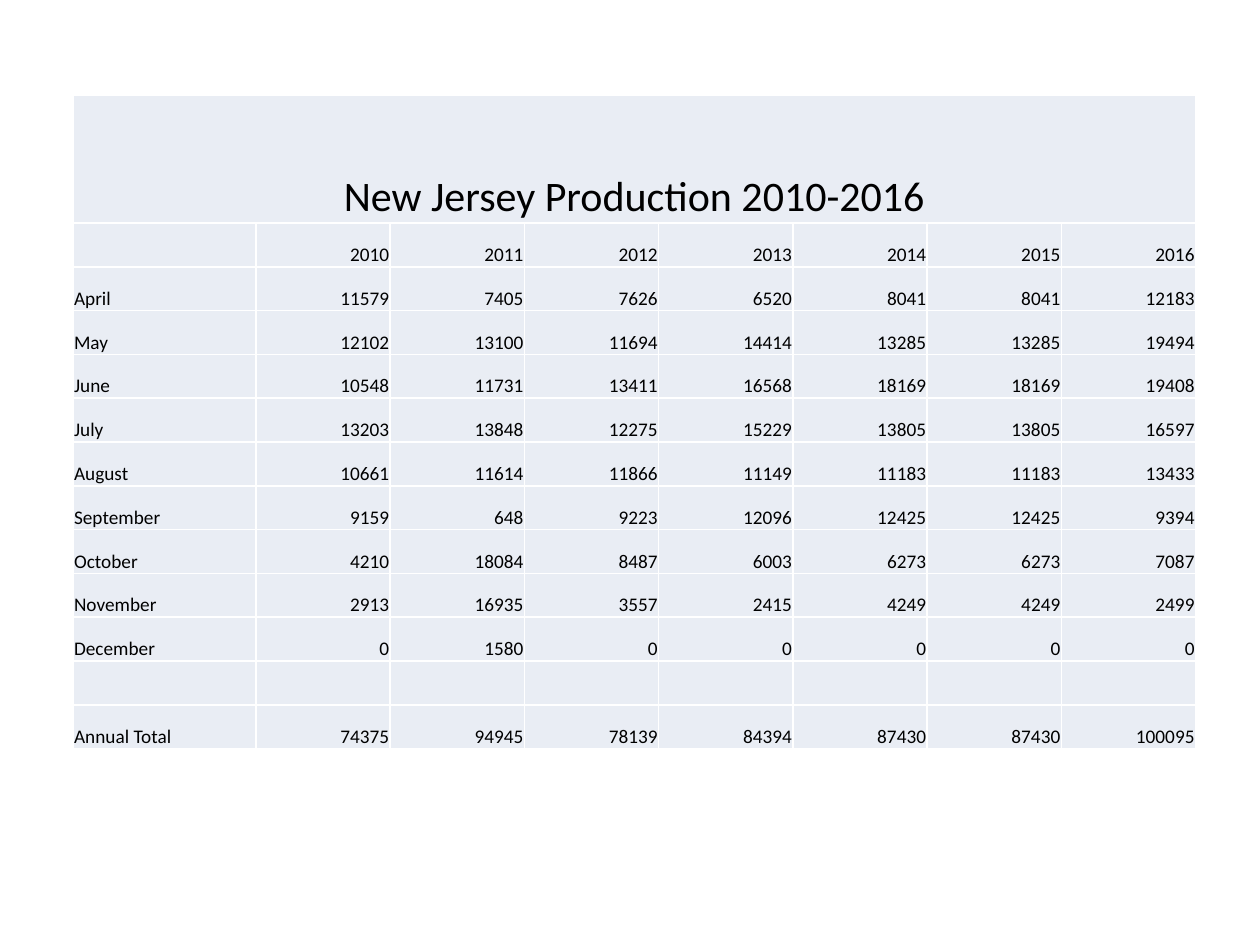
from lxml.etree import SubElement
from pptx import Presentation
from pptx.dml.color import RGBColor
from pptx.enum.text import MSO_ANCHOR, PP_ALIGN
from pptx.oxml.ns import qn
from pptx.util import Pt

PX = 914400 // 126
COLORS = {"text": "000000", "cell": "E9EDF4", "border": "FFFFFF"}
FONT = "Calibri"
TITLE = "New Jersey Production 2010-2016"
PRODUCTION = [
    ["", 2010, 2011, 2012, 2013, 2014, 2015, 2016],
    ["April", 11579, 7405, 7626, 6520, 8041, 8041, 12183],
    ["May", 12102, 13100, 11694, 14414, 13285, 13285, 19494],
    ["June", 10548, 11731, 13411, 16568, 18169, 18169, 19408],
    ["July", 13203, 13848, 12275, 15229, 13805, 13805, 16597],
    ["August", 10661, 11614, 11866, 11149, 11183, 11183, 13433],
    ["September", 9159, 648, 9223, 12096, 12425, 12425, 9394],
    ["October", 4210, 18084, 8487, 6003, 6273, 6273, 7087],
    ["November", 2913, 16935, 3557, 2415, 4249, 4249, 2499],
    ["December", 0, 1580, 0, 0, 0, 0, 0],
    [""] * 8,
    ["Annual Total", 74375, 94945, 78139, 84394, 87430, 87430, 100095],
]


def write_text(cell, text, size=11, align=PP_ALIGN.LEFT, color="text"):
    paragraph = cell.text_frame.paragraphs[0]
    paragraph.alignment = align
    span = paragraph.add_run()
    span.text = text
    span.font.name = FONT
    span.font.size = Pt(size)
    span.font.color.rgb = RGBColor.from_string(COLORS[color])


def style_cell(cell):
    cell.vertical_anchor = MSO_ANCHOR.BOTTOM
    cell.margin_left = cell.margin_right = cell.margin_top = PX
    cell.margin_bottom = 0
    properties = cell._tc.get_or_add_tcPr()
    for side in ("lnL", "lnR", "lnT", "lnB"):
        line = SubElement(properties, qn(f"a:{side}"), w=str(Pt(1)))
        fill = SubElement(line, qn("a:solidFill"))
        SubElement(fill, qn("a:srgbClr"), val=COLORS["border"])
    cell.fill.solid()
    cell.fill.fore_color.rgb = RGBColor.from_string(COLORS["cell"])


def add_production_table(page, left, top, width, height, label_width=183, title_height=128):
    row_count, column_count = len(PRODUCTION) + 1, len(PRODUCTION[0])
    frame = page.shapes.add_table(row_count, column_count,
                                  left * PX, top * PX, width * PX, height * PX)
    table = frame.table
    table.first_row = table.horz_banding = False
    for column in table.columns:
        column.width = (width - label_width) * PX // (column_count - 1)
    table.columns[0].width = label_width * PX
    for row in table.rows:
        row.height = (height - title_height) * PX // (row_count - 1)
    table.rows[0].height = title_height * PX

    for cell in table.iter_cells():
        style_cell(cell)
    title = table.cell(0, 0)
    title.merge(table.cell(0, column_count - 1))
    write_text(title, TITLE, size=24, align=PP_ALIGN.CENTER)
    for row_index, values in enumerate(PRODUCTION, start=1):
        for column_index, value in enumerate(values):
            if value != "":
                write_text(table.cell(row_index, column_index), str(value),
                           align=PP_ALIGN.RIGHT if column_index else PP_ALIGN.LEFT)


def main():
    deck = Presentation()
    deck.slide_width, deck.slide_height = 1260 * PX, 945 * PX
    page = deck.slides.add_slide(deck.slide_layouts[6])
    add_production_table(page, 73, 95, 1123, 654)
    deck.save("out.pptx")


if __name__ == "__main__":
    main()
